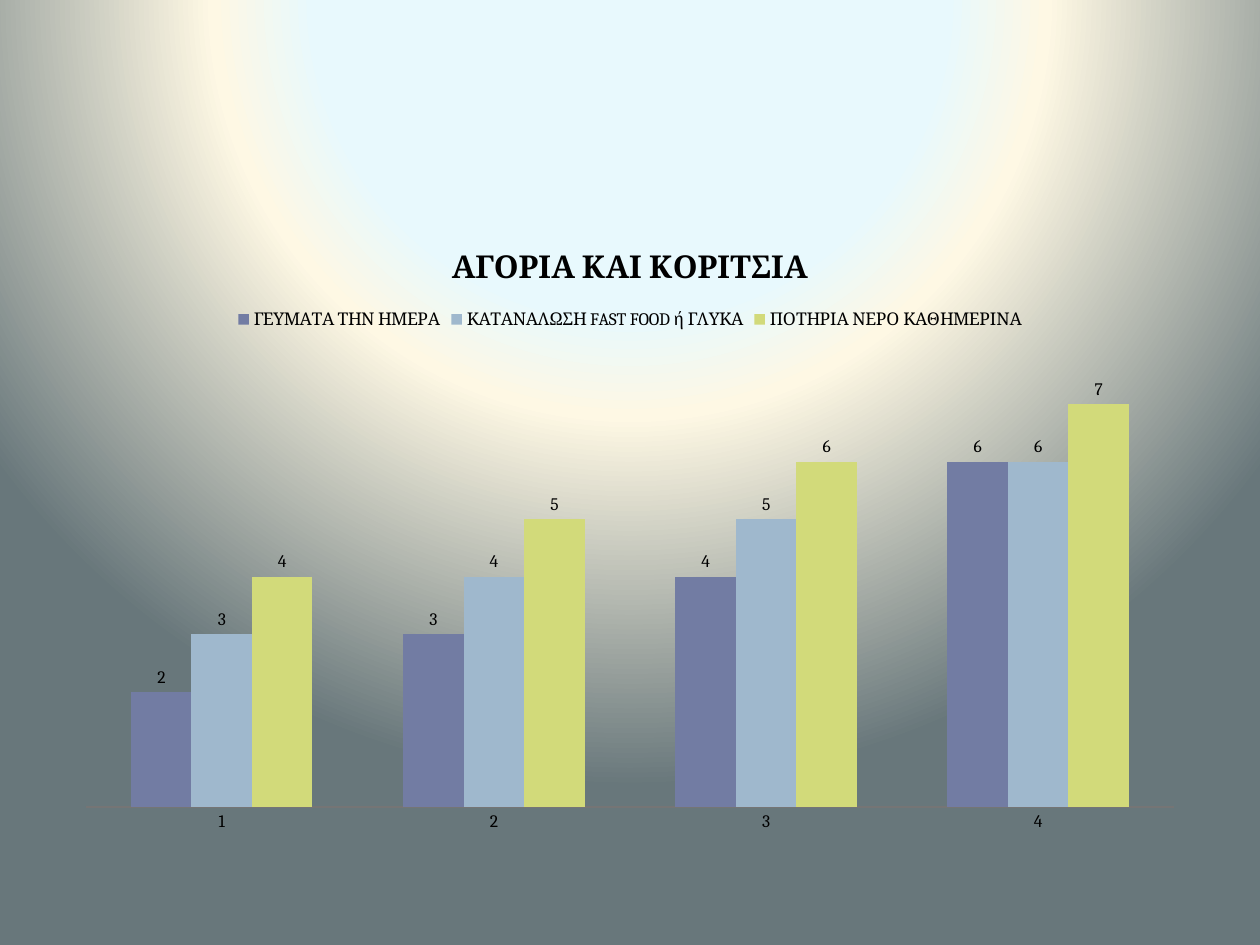
from dataclasses import dataclass

from pptx import Presentation
from pptx import util as u
from pptx.chart.data import CategoryChartData
from pptx.dml.color import RGBColor
from pptx.enum import chart as charts
from pptx.oxml import parse_xml
from pptx.oxml.ns import nsdecls


@dataclass(frozen=True)
class Theme:
    font: str = "Cambria"
    text: str = "000000"
    axis: str = "757575"
    glow: tuple = ((40, "E8F9FD"), (53, "FEF8E4"), (100, "68777B"))
    bars: tuple = ("727CA3", "9FB8CD", "D2DA7A")
    title_size: int = 18
    body_size: int = 10


THEME = Theme()
TITLE = "ΑΓΟΡΙΑ ΚΑΙ ΚΟΡΙΤΣΙΑ"
CATEGORIES = ("1", "2", "3", "4")
SERIES = (
    ("ΓΕΥΜΑΤΑ ΤΗΝ ΗΜΕΡΑ", (2, 3, 4, 6)),
    ("ΚΑΤΑΝΑΛΩΣΗ FAST FOOD ή ΓΛΥΚΑ", (3, 4, 5, 6)),
    ("ΠΟΤΗΡΙΑ ΝΕΡΟ ΚΑΘΗΜΕΡΙΝΑ", (4, 5, 6, 7)),
)


def style_font(font, size, bold=False):
    font.name = THEME.font
    font.size = u.Pt(size)
    font.bold = bold
    font.color.rgb = RGBColor.from_string(THEME.text)


def paint_background(page):
    """Circular glow centred above the top edge of the page."""
    stops = "".join(
        f'<a:gs pos="{percent * 1000}"><a:srgbClr val="{color}"/></a:gs>'
        for percent, color in THEME.glow
    )
    background = parse_xml(
        f'<p:bg {nsdecls("p", "a")}><p:bgPr><a:gradFill rotWithShape="1">'
        f'<a:gsLst>{stops}</a:gsLst><a:path path="circle">'
        '<a:fillToRect l="50000" t="-80000" r="50000" b="180000"/></a:path>'
        "</a:gradFill><a:effectLst/></p:bgPr></p:bg>"
    )
    page._element.cSld.insert(0, background)


def add_habits_chart(page, left, top, width, height):
    data = CategoryChartData()
    data.categories = CATEGORIES
    for name, values in SERIES:
        data.add_series(name, values)
    chart = page.shapes.add_chart(
        charts.XL_CHART_TYPE.COLUMN_CLUSTERED, left, top, width, height, data
    ).chart
    style_font(chart.font, THEME.body_size)

    # Title and legend
    chart.has_title = True
    span = chart.chart_title.text_frame.paragraphs[0].add_run()
    span.text = TITLE
    style_font(span.font, THEME.title_size, bold=True)
    chart.chart_title.include_in_layout = False
    chart.has_legend = True
    chart.legend.position = charts.XL_LEGEND_POSITION.TOP
    chart.legend.include_in_layout = False

    # Axes
    chart.value_axis.visible = False
    chart.value_axis.has_major_gridlines = False
    chart.value_axis.minimum_scale = 0
    chart.value_axis.maximum_scale = 8
    chart.category_axis.major_tick_mark = charts.XL_TICK_MARK.NONE
    chart.category_axis.format.line.color.rgb = RGBColor.from_string(THEME.axis)

    # Bars with their values on top
    plot = chart.plots[0]
    plot.vary_by_categories = False
    plot.gap_width = 150
    plot.overlap = 0
    for series, color in zip(plot.series, THEME.bars):
        series.format.fill.solid()
        series.format.fill.fore_color.rgb = RGBColor.from_string(color)
        labels = series.data_labels
        labels.show_value = True
        labels.position = charts.XL_LABEL_POSITION.OUTSIDE_END
        style_font(labels.font, THEME.body_size)


def main():
    deck = Presentation()
    deck.slide_width, deck.slide_height = u.Inches(10), u.Inches(7.5)
    page = deck.slides.add_slide(deck.slide_layouts.get_by_name("Blank"))
    paint_background(page)
    add_habits_chart(page, u.Inches(0.5), u.Inches(1.75), u.Inches(9), u.Inches(4.95))
    deck.save("out.pptx")


if __name__ == "__main__":
    main()
